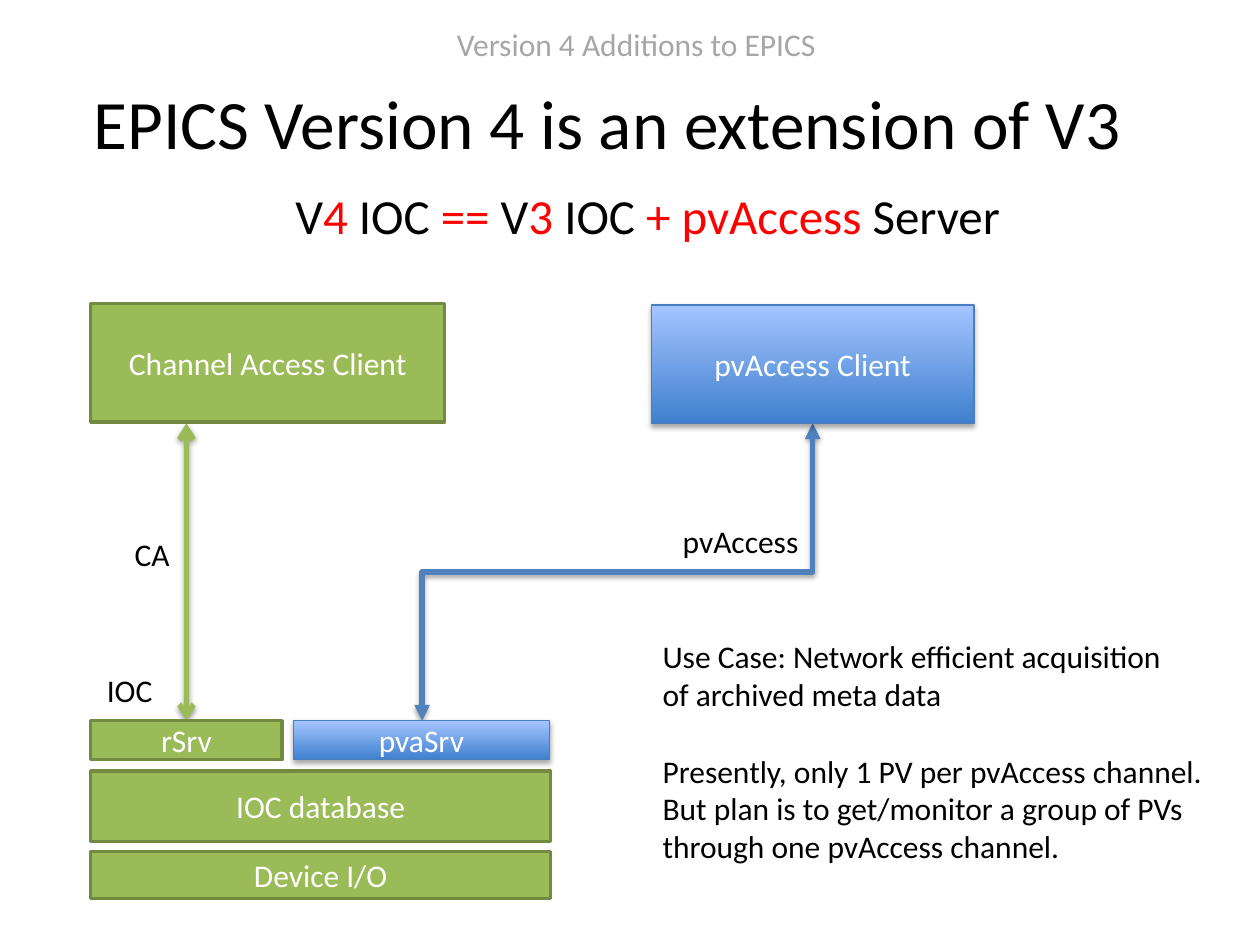
from lxml.etree import SubElement
from pptx import Presentation
from pptx.dml.color import RGBColor
from pptx.enum.shapes import MSO_CONNECTOR as Connector, MSO_SHAPE as Shape
from pptx.enum.text import MSO_ANCHOR as Anchor, MSO_AUTO_SIZE as AutoSize, PP_ALIGN as Align
from pptx.oxml.ns import qn
from pptx.util import Inches, Pt

COLORS = {
    "black": "000000", "white": "FFFFFF", "red": "FF0000", "grey": "A6A6A6",
    "green": "9BBB59", "green edge": "738A42", "blue": "4F81BD",
    "blue edge": "4B7EBC", "blue dark": "3F80CE", "blue light": "A4C4FF",
}
FONT = "Calibri"

HEADLINE = "EPICS Version 4 is an extension of V3"
TOPIC = "Version 4 Additions to EPICS"
EQUATION = [
    ("V", "black"), ("4", "red"), (" IOC ", "black"), ("==", "red"),
    (" V", "black"), ("3", "red"), (" IOC ", "black"),
    ("+ pvAccess ", "red"), ("Server", "black"),
]
USE_CASE = [
    ["Use Case: Network efficient acquisition", "of archived meta data"],
    ["Presently, only 1 PV per pvAccess channel.",
     "But plan is to get/monitor a group of PVs",
     "through one pvAccess channel."],
]
PROTOCOLS = [
    ("CA", 0.97, 4.2, 0.48),
    ("pvAccess", 5.32, 4.09, 1.13),
    ("IOC", 0.75, 5.28, 0.57),
]

STACK_LEFT, STACK_WIDTH, SERVER_TOP = 0.72, 3.65, 5.72
CLIENT_HEIGHT, SERVER_HEIGHT = 0.94, 0.31
CLIENT_BOTTOM = 3.36
V3_BLOCKS = [
    ("Channel Access Client", STACK_LEFT, 2.41, 2.81, CLIENT_HEIGHT),
    ("rSrv", STACK_LEFT, SERVER_TOP, 1.52, SERVER_HEIGHT),
    ("IOC database", STACK_LEFT, 6.12, STACK_WIDTH, 0.56),
    ("Device I/O", STACK_LEFT, 6.76, STACK_WIDTH, 0.37),
]
V4_BLOCKS = [
    ("pvAccess Client", 5.17, 2.42, 2.56, CLIENT_HEIGHT),
    ("pvaSrv", 2.33, SERVER_TOP, 2.03, SERVER_HEIGHT),
]


def apply(target, **formats):
    for key, value in formats.items():
        setattr(target, key, value)


def rgb(color):
    return RGBColor.from_string(COLORS[color])


def write(paragraph, words, color="black", size=18):
    run = paragraph.add_run()
    run.text = words
    apply(run.font, name=FONT, size=Pt(size))
    run.font.color.rgb = rgb(color)


def place(part, left, top, width, height):
    apply(part, left=Inches(left), top=Inches(top), width=Inches(width), height=Inches(height))


def add_text(left, top, width, height, wrap=False):
    frame = slide.shapes.add_textbox(*map(Inches, (left, top, width, height))).text_frame
    apply(frame, word_wrap=wrap, auto_size=AutoSize.SHAPE_TO_FIT_TEXT)
    return frame


def add_block(label, *bounds):
    block = slide.shapes.add_shape(Shape.RECTANGLE, *map(Inches, bounds))
    block.shadow.inherit = False
    write(block.text_frame.paragraphs[0], label, "white")
    return block


def cast_shadow(properties, distance, opacity):
    effects = properties.find(qn("a:effectLst"))
    if effects is None:
        effects = SubElement(properties, qn("a:effectLst"))
    shadow = SubElement(effects, qn("a:outerShdw"), blurRad=str(Pt(3.1)),
                        dist=str(Pt(distance)), dir="5400000", rotWithShape="0")
    tint = SubElement(shadow, qn("a:srgbClr"), val=COLORS["black"])
    SubElement(tint, qn("a:alpha"), val=str(opacity * 1000))


def add_link(kind, color, arrow, start, end):
    link = slide.shapes.add_connector(kind, *map(Inches, (*start, *end)))
    link.line.width = Pt(3)
    link.line.color.rgb = rgb(color)
    properties = link._element.spPr
    for tip in ("a:headEnd", "a:tailEnd"):
        SubElement(properties.find(qn("a:ln")), qn(tip), type=arrow)
    cast_shadow(properties, 1.6, 38)
    return properties


def add_vertical_elbow(color, arrow, start, end):
    (x1, y1), (x2, y2) = start, end
    center_x, center_y = (x1 + x2) / 2, (y1 + y2) / 2
    across, down = abs(y2 - y1) / 2, abs(x2 - x1) / 2
    properties = add_link(Connector.ELBOW, color, arrow,
                          (center_x - across, center_y - down),
                          (center_x + across, center_y + down))
    properties.find(qn("a:xfrm")).set("rot", "5400000")


deck = Presentation()
apply(deck, slide_width=Inches(10), slide_height=Inches(7.5))
slide = deck.slides.add_slide(deck.slide_layouts[1])
title, topic = slide.placeholders

place(title, 0.5, 0.67, 9, 0.59)
apply(title.text_frame, vertical_anchor=Anchor.MIDDLE, margin_right=Inches(0.46))
write(title.text_frame.paragraphs[0], HEADLINE, size=39.6)

place(topic, 2.27, 0.15, 5.56, 0.43)
topic_line = topic.text_frame.paragraphs[0]
topic_line.alignment = Align.CENTER
write(topic_line, TOPIC, "grey")
topic_format = topic_line._p.get_or_add_pPr()
for key in ("marL", "indent"):
    topic_format.set(key, "0")
SubElement(topic_format, qn("a:buNone"))

equation = add_text(0.28, 1.42, 9.72, 0.57, wrap=True).paragraphs[0]
equation.alignment = Align.CENTER
for term, color in EQUATION:
    write(equation, term, color, 28)

for label, left, top, width in PROTOCOLS:
    write(add_text(left, top, width, 0.4).paragraphs[0], label)

use_case = add_text(5.16, 5.01, 4.55, 1.92)
for group, lines in enumerate(USE_CASE):
    for index, words in enumerate(lines):
        first = group == index == 0
        paragraph = use_case.paragraphs[0] if first else use_case.add_paragraph()
        if group and index == 0:
            paragraph.space_before = Pt(22)
        write(paragraph, words)

add_vertical_elbow("blue", "triangle", (6.45, CLIENT_BOTTOM), (3.35, SERVER_TOP))
add_link(Connector.STRAIGHT, "green", "arrow", (1.48, CLIENT_BOTTOM), (1.48, SERVER_TOP))

for entry in V3_BLOCKS:
    block = add_block(*entry)
    block.fill.solid()
    block.fill.fore_color.rgb = rgb("green")
    block.line.color.rgb = rgb("green edge")
    block.line.width = Pt(2)

for entry in V4_BLOCKS:
    block = add_block(*entry)
    block.fill.gradient()
    block.fill.gradient_angle = 90
    for stop, color, position in zip(block.fill.gradient_stops, ("blue dark", "blue light"), (0, 1)):
        stop.color.rgb = rgb(color)
        stop.position = position
    block.line.color.rgb = rgb("blue edge")
    block.line.width = Pt(0.75)
    cast_shadow(block._element.spPr, 1.8, 35)

deck.save("out.pptx")
